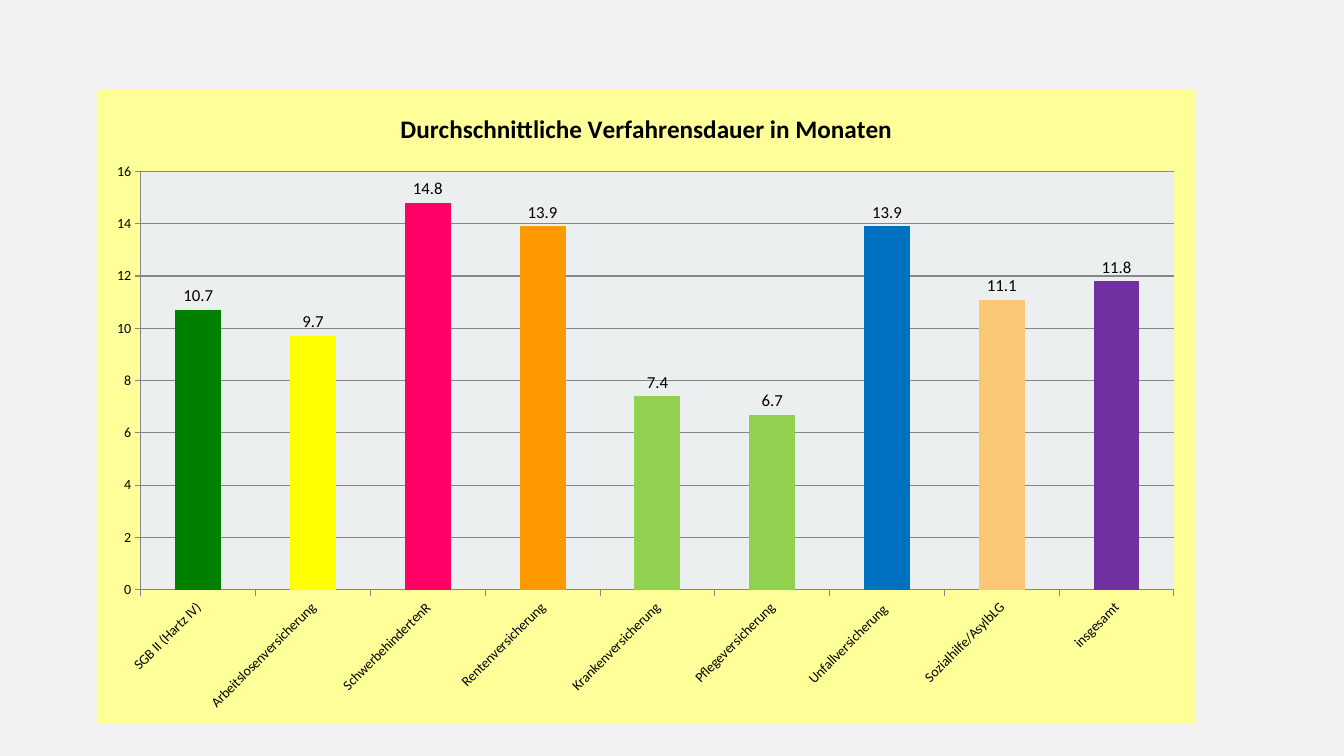
import pptx
import pptx.chart.data
import pptx.dml.color
import pptx.enum.chart
import pptx.oxml
import pptx.oxml.ns
import pptx.util

EMU_PER_PX = 914400 / 100.8
DURATIONS = [
    ("SGB II (Hartz IV)", 10.7, "008000"),
    ("Arbeitslosenversicherung", 9.7, "FFFF00"),
    ("SchwerbehindertenR", 14.8, "FF0066"),
    ("Rentenversicherung", 13.9, "FF9900"),
    ("Krankenversicherung", 7.4, "92D050"),
    ("Pflegeversicherung", 6.7, "92D050"),
    ("Unfallversicherung ", 13.9, "0070C0"),
    ("Sozialhilfe/AsylbLG", 11.1, "FAC777"),
    ("insgesamt", 11.8, "7030A0"),
]


def px(length):
    return pptx.util.Emu(round(length * EMU_PER_PX))


def color(value):
    return pptx.dml.color.RGBColor.from_string(value)


def fill_xml(value):
    return pptx.oxml.parse_xml(
        f'<c:spPr {pptx.oxml.ns.nsdecls("c", "a")}><a:solidFill><a:srgbClr val="{value}"/>'
        '</a:solidFill><a:ln><a:noFill/></a:ln></c:spPr>')


class SlideBuilder:
    """Holds the chart style and the current slide."""

    font_name = "Calibri"
    text_color = "000000"
    line_color = "868686"

    def __init__(self, slide, background):
        self.slide = slide
        slide.background.fill.solid()
        slide.background.fill.fore_color.rgb = color(background)

    def style_font(self, font, size, bold=False):
        font.name = self.font_name
        font.size = pptx.util.Pt(size)
        font.bold = bold
        font.color.rgb = color(self.text_color)

    def style_line(self, line):
        line.color.rgb = color(self.line_color)
        line.width = pptx.util.Pt(0.75)

    def add_title(self, chart, text):
        chart.has_title = True
        chart.chart_title.include_in_layout = False
        paragraph = chart.chart_title.text_frame.paragraphs[0]
        paragraph.text = text
        self.style_font(paragraph.font, 18, bold=True)

    def style_axes(self, chart):
        for axis in (chart.category_axis, chart.value_axis):
            axis.major_tick_mark = pptx.enum.chart.XL_TICK_MARK.OUTSIDE
            axis.minor_tick_mark = pptx.enum.chart.XL_TICK_MARK.NONE
            self.style_line(axis.format.line)
            self.style_font(axis.tick_labels.font, 10)
        value_axis = chart.value_axis
        value_axis.minimum_scale, value_axis.maximum_scale = 0, 16
        value_axis.major_unit = 2
        value_axis.has_major_gridlines = True
        self.style_line(value_axis.major_gridlines.format.line)
        chart.element.xpath(".//c:catAx/c:txPr/a:bodyPr")[0].set("rot", "-2700000")

    def style_areas(self, chart, chart_fill, plot_fill, x, y, width, height):
        chart.element.xpath("c:txPr")[0].addprevious(fill_xml(chart_fill))
        plot_area = chart.element.xpath("c:chart/c:plotArea")[0]
        plot_area.append(fill_xml(plot_fill))
        for layout in plot_area.xpath("c:layout"):
            plot_area.remove(layout)
        bounds = "".join(f'<c:{name} val="{value}"/>' for name, value in
                         (("x", x), ("y", y), ("w", width), ("h", height)))
        plot_area.insert(0, pptx.oxml.parse_xml(
            f'<c:layout {pptx.oxml.ns.nsdecls("c")}><c:manualLayout>'
            '<c:layoutTarget val="inner"/><c:xMode val="edge"/><c:yMode val="edge"/>'
            f'{bounds}</c:manualLayout></c:layout>'))

    def add_columns(self, left, top, width, height, title, rows):
        names, values, colors = zip(*rows)
        data = pptx.chart.data.CategoryChartData()
        data.categories = names
        data.add_series("Series 1", values)
        chart = self.slide.shapes.add_chart(
            pptx.enum.chart.XL_CHART_TYPE.COLUMN_CLUSTERED,
            px(left), px(top), px(width), px(height), data).chart
        chart.has_legend = False
        self.style_font(chart.font, 10)
        self.add_title(chart, title)
        self.style_axes(chart)
        plot = chart.plots[0]
        plot.gap_width = 150
        plot.vary_by_categories = False
        series = plot.series[0]
        series.format.fill.solid()
        series.format.fill.fore_color.rgb = color("F6A21D")
        for index, value in enumerate(colors):
            fill = series.points[index].format.fill
            fill.solid()
            fill.fore_color.rgb = color(value)
        labels = series.data_labels
        labels.show_value = True
        labels.position = pptx.enum.chart.XL_LABEL_POSITION.OUTSIDE_END
        self.style_font(labels.font, 12)
        return chart


def main():
    presentation = pptx.Presentation()
    presentation.slide_width, presentation.slide_height = px(1344), px(756)
    slide = presentation.slides.add_slide(presentation.slide_layouts[6])
    builder = SlideBuilder(slide, "F2F2F2")
    chart = builder.add_columns(
        97, 89, 1099, 634, "Durchschnittliche Verfahrensdauer in Monaten", DURATIONS)
    builder.style_areas(chart, "FFFF99", "EBEFF0", 0.04, 0.13, 0.94, 0.66)
    presentation.save("out.pptx")


if __name__ == "__main__":
    main()
